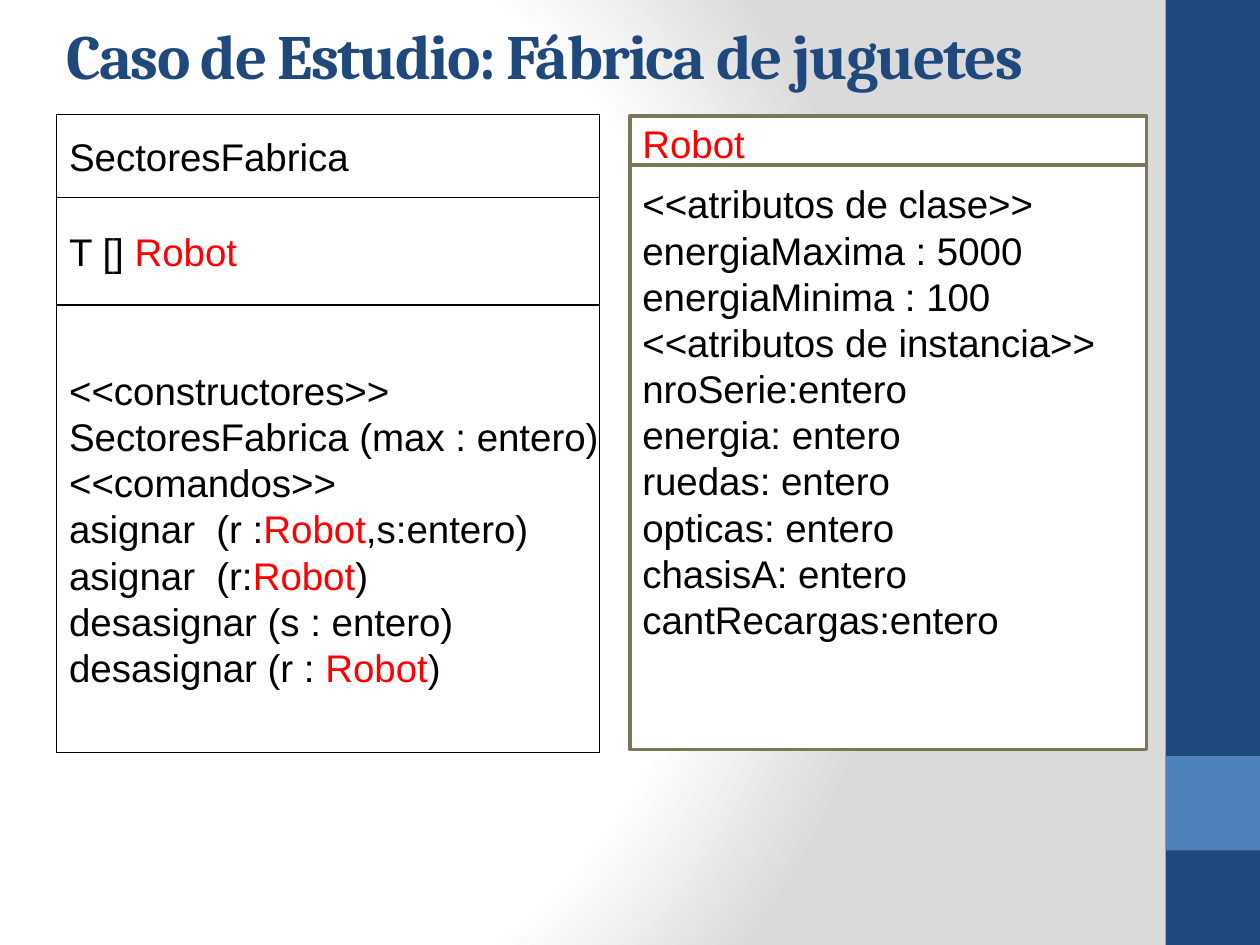
from lxml import etree
from pptx import Presentation
from pptx.dml.color import RGBColor
from pptx.enum.shapes import MSO_SHAPE as Shape
from pptx.enum.text import MSO_ANCHOR as Anchor, PP_ALIGN as Align
from pptx.oxml import parse_xml
from pptx.oxml.ns import qn
from pptx.util import Inches, Pt

NAVY, BLUE, OLIVE = "1F497D", "4F81BD", "7B7859"
BLACK, WHITE, RED = "000000", "FFFFFF", "FF0000"
CLASS_NAME = "Robot"


def color(hex_string):
    return RGBColor.from_string(hex_string)


def add_box(left, top, width, height, fill=None, line=None, line_width=1):
    shape = slide.shapes.add_shape(
        Shape.RECTANGLE, Inches(left), Inches(top), Inches(width), Inches(height))
    shape.shadow.inherit = False
    if fill:
        shape.fill.solid()
        shape.fill.fore_color.rgb = color(fill)
    else:
        shape.fill.background()
    if line:
        shape.line.color.rgb = color(line)
        shape.line.width = Pt(line_width)
    else:
        shape.line.fill.background()
    return shape


presentation = Presentation()
presentation.slide_width, presentation.slide_height = Inches(10), Inches(7.5)
slide = presentation.slides.add_slide(presentation.slide_layouts[6])

# Background: circular gradient from white to grey
slide.background.fill.gradient()
gradient = slide.element.find(".//" + qn("a:gradFill"))
for child in list(gradient):
    gradient.remove(child)
namespace = 'xmlns:a="http://schemas.openxmlformats.org/drawingml/2006/main"'
stops = etree.SubElement(gradient, qn("a:gsLst"))
for position, stop_color in [(0, WHITE), (75, WHITE), (100, "DADADA")]:
    stops.append(parse_xml(
        f'<a:gs {namespace} pos="{position * 1000}"><a:srgbClr val="{stop_color}"/></a:gs>'))
gradient.append(parse_xml(
    f'<a:path {namespace} path="circle">'
    '<a:fillToRect l="20000" t="50000" r="100000" b="50000"/></a:path>'))

# Side band
add_box(9.25, 0, 0.75, 7.5, fill=NAVY)
add_box(9.25, 6, 0.75, 0.75, fill=BLUE)

# Class diagrams: left, width, fill, line, line width, wrap, compartments
# Each compartment: top, height, bottom inset, lines of text
diagrams = [
    (0.45, 4.31, None, BLACK, 0.75, False, [
        (0.91, 0.66, 0.05, ["SectoresFabrica"]),
        (1.57, 0.85, 0.05, ["T [] Robot"]),
        (2.42, 3.55, 0.05, [
            "<<constructores>>",
            "SectoresFabrica (max : entero)",
            "<<comandos>>",
            "asignar  (r :Robot,s:entero)",
            "asignar  (r:Robot)",
            "desasignar (s : entero)",
            "desasignar (r : Robot)",
        ]),
    ]),
    (5, 4.1, WHITE, OLIVE, 2, True, [
        (0.92, 0.43, 0.05, ["Robot"]),
        (1.31, 4.64, 0.78, [
            "<<atributos de clase>>",
            "energiaMaxima : 5000",
            "energiaMinima : 100",
            "<<atributos de instancia>>",
            "nroSerie:entero",
            "energia: entero",
            "ruedas: entero",
            "opticas: entero",
            "chasisA: entero",
            "cantRecargas:entero",
        ]),
    ]),
]
for left, width, fill, line, line_width, wrap, compartments in diagrams:
    for top, height, bottom_inset, lines in compartments:
        frame = add_box(left, top, width, height, fill, line, line_width).text_frame
        frame.word_wrap = wrap
        frame.vertical_anchor = Anchor.MIDDLE
        frame.margin_bottom = Inches(bottom_inset)
        for index, text in enumerate(lines):
            paragraph = frame.add_paragraph() if index else frame.paragraphs[0]
            paragraph.alignment = Align.LEFT
            paragraph.font.name = "Arial"
            paragraph.font.size = Pt(22)
            # The class name stands out in red
            before, name, after = text.partition(CLASS_NAME)
            for part, part_color in [(before, BLACK), (name, RED), (after, BLACK)]:
                if part:
                    run = paragraph.add_run()
                    run.text = part
                    run.font.color.rgb = color(part_color)

# Title
title = slide.shapes.add_textbox(Inches(0.43), Inches(0.05), Inches(9.14), Inches(0.76))
title.text_frame.word_wrap = True
title.text_frame.vertical_anchor = Anchor.MIDDLE
paragraph = title.text_frame.paragraphs[0]
run = paragraph.add_run()
run.text = "Caso de Estudio: Fábrica de juguetes"
run.font.name = "Cambria"
run.font.size = Pt(36)
run.font.bold = True
run.font.color.rgb = color(NAVY)
run.font._element.set("spc", "-100")  # letter spacing of -1 pt

presentation.save("out.pptx")
